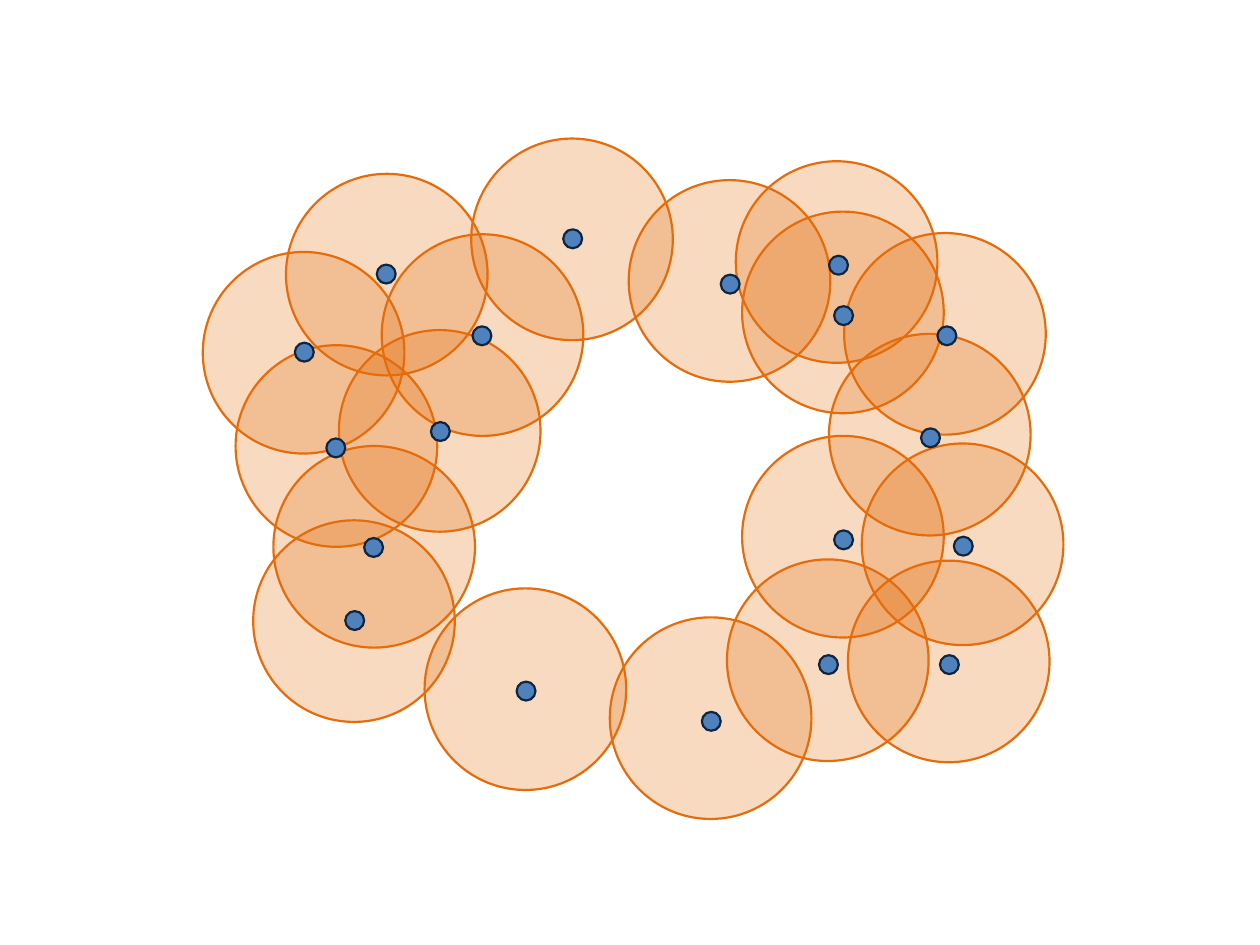
from lxml import etree
from pptx import Presentation
from pptx.dml.color import RGBColor
from pptx.enum.shapes import MSO_SHAPE
from pptx.oxml.ns import qn
from pptx.util import Inches, Pt

OVAL = MSO_SHAPE.OVAL
COLORS = {"range": "E46C0A", "node": "4F81BD", "node_line": "0F243E"}
RANGE_SIZE, NODE_SIZE = 1.6, 0.15
RANGE_ALPHA = 25  # percent opacity

# Left and top of each range circle, back to front
RANGES = [
    (6.7, 1.85), (6.58, 2.65), (5.89, 1.68), (5.84, 1.28), (4.99, 1.43),
    (3.74, 1.1), (4.84, 4.9), (2.01, 4.13), (2.69, 2.62), (1.87, 2.74),
    (5.77, 4.44), (1.61, 2), (3.37, 4.67), (2.17, 3.54), (2.27, 1.38),
    (3.03, 1.86), (5.89, 3.46), (6.84, 3.52), (6.73, 4.45),
]
# Left and top of each node dot, back to front
NODES = [
    (2.34, 2.72), (3.75, 2.59), (4.47, 1.82), (5.72, 2.18), (6.58, 2.03),
    (7.57, 4.26), (6.5, 5.2), (5.57, 5.65), (4.1, 5.41), (2.74, 4.85),
    (2.59, 3.48), (6.62, 4.21), (2.89, 4.27), (7.31, 3.4), (6.62, 2.43),
    (7.46, 5.2), (3.42, 3.35), (2.99, 2.1), (7.44, 2.59),
]

prs = Presentation()
prs.slide_width, prs.slide_height = Inches(10), Inches(7.5)
s = prs.slides.add_slide(prs.slide_layouts[6])


def add_circle(left, top, size, fill, line):
    sp = s.shapes.add_shape(OVAL, Inches(left), Inches(top), Inches(size), Inches(size))
    sp.shadow.inherit = False
    sp.fill.solid()
    sp.fill.fore_color.rgb = RGBColor.from_string(COLORS[fill])
    sp.line.color.rgb = RGBColor.from_string(COLORS[line])
    sp.line.width = Pt(1.25)
    return sp


# Translucent range circles
for left, top in RANGES:
    sp = add_circle(left, top, RANGE_SIZE, "range", "range")
    clr = sp.element.spPr.find(qn("a:solidFill")).find(qn("a:srgbClr"))
    etree.SubElement(clr, qn("a:alpha")).set("val", str(RANGE_ALPHA * 1000))

# Node dots on top
for left, top in NODES:
    add_circle(left, top, NODE_SIZE, "node", "node_line")

prs.save("out.pptx")
